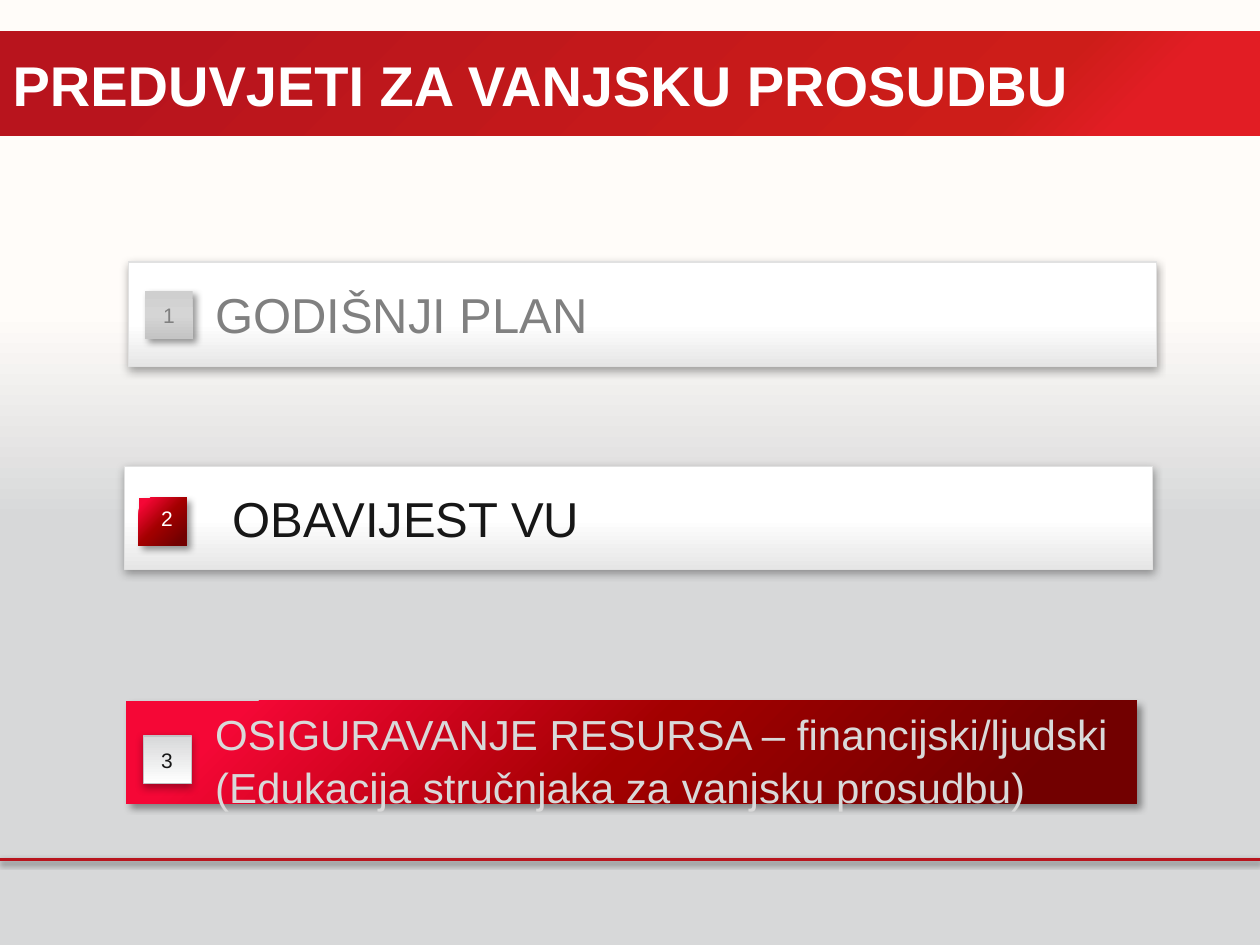
from lxml import etree
from pptx import Presentation
from pptx.dml.color import RGBColor
from pptx.enum.shapes import MSO_CONNECTOR, MSO_SHAPE
from pptx.enum.text import MSO_ANCHOR, PP_ALIGN
from pptx.oxml.ns import qn
from pptx.util import Inches, Pt

RECT, STRAIGHT = MSO_SHAPE.RECTANGLE, MSO_CONNECTOR.STRAIGHT
TOP, MIDDLE = MSO_ANCHOR.TOP, MSO_ANCHOR.MIDDLE
LEFT, CENTER, JUSTIFY = PP_ALIGN.LEFT, PP_ALIGN.CENTER, PP_ALIGN.JUSTIFY

TITLE = "PREDUVJETI ZA VANJSKU PROSUDBU"
BACKGROUND = ([(45, "D7D8D9"), (67, "FFFCF9"), (81, "FFFCF9")], 270)
BAND = ([(11, "E21D24"), (20, "CD1D19"), (89, "B8141D")], 225)
WHITE_1 = ([(0, "E6E6E6"), (41, "FFFFFF"), (100, "FFFFFF")], 270)
WHITE_2 = ([(0, "E6E6E6"), (49, "FFFFFF"), (100, "FFFFFF")], 270)
GREY = ([(0, "CFCFCF"), (50, "D5D5D5"), (100, "C4C4C4")], 90)
RED = ([(11, "F50736"), (50, "A20000"), (89, "720000")], 45)
PALE = ([(0, "FFFFFF"), (100, "D7D8D9")], 270)

SOFT = (35, 5, 1.8, 90)
DIAGONAL = (40, 4, 3, 45)
RULE_SHADOW = (38, 3.1, 1.6, 90)
MARKER = 0.38

ITEMS = [
    {
        "bar": ((1.02, 2.08, 8.16, 0.83), WHITE_1, SOFT, "E1E1E1"),
        "marker": ((1.15, 2.31, MARKER, MARKER), GREY, DIAGONAL, None),
        "number": ("1", None, "808080", MIDDLE),
        "label": (["GODIŠNJI PLAN"], (1.61, 2.21, 7.12, 0.57), 28, "808080"),
    },
    {
        "bar": ((0.99, 3.7, 8.16, 0.82), WHITE_2, SOFT, "E1E1E1"),
        "marker": ((1.1, 3.95, MARKER, MARKER), RED, DIAGONAL, None),
        "number": ("2", (1.15, 3.96, 0.35, 0.3), "FFFFFF", MIDDLE),
        "label": (["OBAVIJEST VU"], (1.75, 3.83, 7.08, 0.57), 28, "171717"),
    },
    {
        "bar": ((1, 5.56, 8.02, 0.82), RED, DIAGONAL, None),
        "marker": ((1.14, 5.84, MARKER, MARKER), PALE, SOFT, "C1C2C4"),
        "number": ("3", (1.15, 5.88, 0.35, 0.3), "171717", TOP),
        "label": (
            ["OSIGURAVANJE RESURSA – financijski/ljudski",
             "(Edukacija stručnjaka za vanjsku prosudbu)"],
            (1.61, 5.56, 7.35, 1.31), 24, "D9D9D9"),
    },
]


def color(value):
    return RGBColor.from_string(value)


def inches(box):
    return [Inches(length) for length in box]


def add_node(parent, tag, **attributes):
    node = etree.SubElement(parent, qn(tag))
    for key, value in attributes.items():
        node.set(key, str(value))
    return node


def set_gradient(fill, owner, gradient):
    stops, angle = gradient
    fill.gradient()
    grad = next(owner.iter(qn("a:gradFill")))
    for child in list(grad):
        grad.remove(child)
    stop_list = add_node(grad, "a:gsLst")
    for position, value in stops:
        stop = add_node(stop_list, "a:gs", pos=position * 1000)
        add_node(stop, "a:srgbClr", val=value)
    add_node(grad, "a:lin", ang=angle * 60000, scaled=0)


def add_shadow(effects, shadow):
    opacity, blur, distance, angle = shadow
    outer = add_node(effects, "a:outerShdw", blurRad=Pt(blur), dist=Pt(distance),
                     dir=angle * 60000, algn="ctr", rotWithShape=0)
    add_node(add_node(outer, "a:srgbClr", val="000000"), "a:alpha", val=opacity * 1000)


def add_panel(slide, box, gradient, shadow=None, outline=None):
    panel = slide.shapes.add_shape(RECT, *inches(box))
    set_gradient(panel.fill, panel._element.spPr, gradient)
    if outline:
        panel.line.color.rgb = color(outline)
        panel.line.width = Pt(0.75)
    else:
        panel.line.fill.background()
    panel.shadow.inherit = False
    if shadow:
        add_shadow(panel._element.spPr.find(qn("a:effectLst")), shadow)
    return panel


def write(holder, lines, size, value, align, anchor=TOP, bold=False):
    frame = holder.text_frame
    frame.text = "\n".join(lines)
    frame.word_wrap = True
    frame.vertical_anchor = anchor
    font_format = {"name": "Arial", "size": Pt(size), "bold": bold}
    for paragraph in frame.paragraphs:
        paragraph.alignment = align
        paragraph.line_spacing = 1.04 if len(lines) > 1 else 1
        for run in paragraph.runs:
            for key, setting in font_format.items():
                setattr(run.font, key, setting)
            run.font.color.rgb = color(value)


def add_rule(slide):
    rule = slide.shapes.add_connector(STRAIGHT, *inches((0, 6.82, 10, 6.82)))
    rule.line.color.rgb = color("B8141D")
    rule.line.width = Pt(2)
    add_shadow(add_node(rule._element.spPr, "a:effectLst"), RULE_SHADOW)


def add_item(slide, item):
    add_panel(slide, *item["bar"])
    marker = add_panel(slide, *item["marker"])
    digit, digit_box, digit_color, anchor = item["number"]
    holder = slide.shapes.add_textbox(*inches(digit_box)) if digit_box else marker
    write(holder, [digit], 12, digit_color, CENTER, anchor)
    lines, label_box, size, label_color = item["label"]
    label = slide.shapes.add_textbox(*inches(label_box))
    write(label, lines, size, label_color, JUSTIFY)


def place_title(slide):
    title = slide.shapes.title
    title.left, title.top, title.width, title.height = inches((0, 0.36, 8.78, 0.62))
    write(title, [TITLE], 32, "FFFFFF", LEFT, MIDDLE, True)
    slide.shapes._spTree.append(title._element)


def main():
    """Build the slide on the conditions for external evaluation."""
    deck = Presentation()
    deck.slide_width, deck.slide_height = inches((10, 7.5))
    slide = deck.slides.add_slide(deck.slide_layouts[5])
    set_gradient(slide.background.fill, slide._element, BACKGROUND)
    add_panel(slide, (0, 0.25, 10, 0.83), BAND)
    add_rule(slide)
    for item in ITEMS:
        add_item(slide, item)
    place_title(slide)
    deck.save("out.pptx")


if __name__ == "__main__":
    main()
